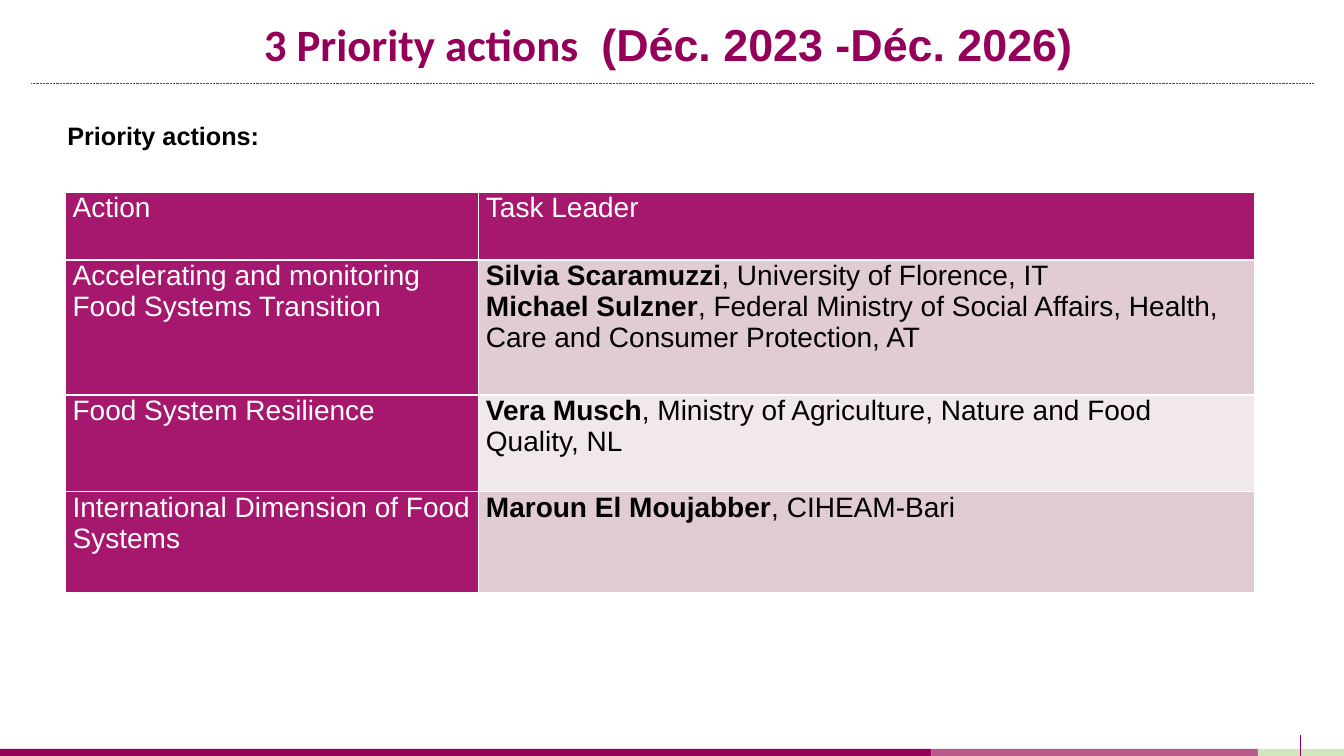
from lxml.etree import SubElement
from pptx import Presentation
from pptx.dml.color import RGBColor
from pptx.enum.dml import MSO_LINE
from pptx.enum.shapes import MSO_CONNECTOR, MSO_SHAPE
from pptx.enum.text import MSO_ANCHOR, MSO_AUTO_SIZE, PP_ALIGN
from pptx.oxml import parse_xml
from pptx.oxml.ns import nsdecls, qn
from pptx.util import Inches, Pt

PLUM = RGBColor(0x94, 0x00, 0x59)
ROSE = RGBColor(0xB8, 0x59, 0x8A)
GREEN = RGBColor(0xD1, 0xE5, 0xBF)
MAGENTA = RGBColor(0xA6, 0x18, 0x6E)
PINK = RGBColor(0xE1, 0xCC, 0xD5)
PALE = RGBColor(0xF1, 0xE8, 0xEB)
WHITE = RGBColor(0xFF, 0xFF, 0xFF)
BLACK = RGBColor(0, 0, 0)

WIDTH, HEIGHT = 13.33, 7.5
FOOTER_HEIGHT = 0.07
FOOTER_SHARES = [(0.693, PLUM), (0.243, ROSE), (0.064, GREEN)]
COLUMN_WIDTHS = [4.1, 7.69]
ROW_HEIGHTS = [0.67, 1.34, 0.96, 1]
ACTIONS = [
    ("Accelerating and monitoring Food Systems Transition", [
        ("Silvia Scaramuzzi", ", University of Florence, IT"),
        ("Michael Sulzner", ", Federal Ministry of Social Affairs, Health, "
                            "Care and Consumer Protection, AT")]),
    ("Food System Resilience", [
        ("Vera Musch", ", Ministry of Agriculture, Nature and Food Quality, NL")]),
    ("International Dimension of Food Systems", [
        ("Maroun El Moujabber", ", CIHEAM-Bari")]),
]


def add_run(p, text, size, color, bold=False, font="Arial"):
    r = p.add_run()
    r.text = text
    r.font.name = font
    r.font.size = Pt(size)
    r.font.bold = bold
    r.font.color.rgb = color


def add_bar(s, left, width, color):
    bar = s.shapes.add_shape(MSO_SHAPE.RECTANGLE, Inches(left), Inches(HEIGHT - FOOTER_HEIGHT),
                             Inches(width), Inches(FOOTER_HEIGHT))
    bar.shadow.inherit = False
    bar.fill.solid()
    bar.fill.fore_color.rgb = color
    bar.line.fill.background()


def add_line(s, start, end, color, dash=None):
    line = s.shapes.add_connector(MSO_CONNECTOR.STRAIGHT, *map(Inches, start + end))
    line.line.color.rgb = color
    line.line.width = Pt(0.5)
    if dash:
        line.line.dash_style = dash
    SubElement(line._element.spPr, qn("a:effectLst"))


def add_footer(s):
    left = 0
    for share, color in FOOTER_SHARES:
        add_bar(s, left, share * WIDTH, color)
        left += share * WIDTH
    add_line(s, (12.9, 7.29), (12.9, HEIGHT), PLUM)


def add_title(s):
    title = s.shapes.title
    title.left, title.top = Inches(0.44), Inches(0.11)
    title.width, title.height = Inches(12.5), Inches(0.65)
    tf = title.text_frame
    tf.auto_size = MSO_AUTO_SIZE.NONE
    tf.vertical_anchor = MSO_ANCHOR.BOTTOM
    p = tf.paragraphs[0]
    p.alignment = PP_ALIGN.CENTER
    p.line_spacing = 0.9
    add_run(p, "3 Priority actions ", 32, PLUM, True, "Calibri")
    add_run(p, " (Déc. 2023 -Déc. 2026) ", 32, PLUM, True)


def add_heading(s, text):
    tf = s.shapes.add_textbox(Inches(0.57), Inches(1.12), Inches(12), Inches(0.44)).text_frame
    tf.word_wrap = True
    tf.vertical_anchor = MSO_ANCHOR.MIDDLE
    add_run(tf.paragraphs[0], text, 18, BLACK, True)


def format_cell(cell, color):
    cell.margin_left = cell.margin_right = Inches(0.07)
    cell.margin_top = cell.margin_bottom = 0
    cell.fill.solid()
    cell.fill.fore_color.rgb = color
    tcPr = cell._tc.get_or_add_tcPr()
    for i, side in enumerate("LRTB"):
        tcPr.insert(i, parse_xml(
            f'<a:ln{side} {nsdecls("a")} w="{Pt(1)}"><a:solidFill>'
            f'<a:srgbClr val="{WHITE}"/></a:solidFill></a:ln{side}>'))


def add_label(cell, text):
    format_cell(cell, MAGENTA)
    add_run(cell.text_frame.paragraphs[0], text, 20, WHITE)


def add_leaders(cell, leaders, color):
    format_cell(cell, color)
    tf = cell.text_frame
    for i, (name, office) in enumerate(leaders):
        p = tf.add_paragraph() if i else tf.paragraphs[0]
        add_run(p, name, 20, BLACK, True)
        add_run(p, office, 20, BLACK)


def add_actions_table(s):
    table = s.shapes.add_table(len(ROW_HEIGHTS), len(COLUMN_WIDTHS), Inches(0.65), Inches(1.91),
                               Inches(sum(COLUMN_WIDTHS)), Inches(sum(ROW_HEIGHTS))).table
    for column, width in zip(table.columns, COLUMN_WIDTHS):
        column.width = Inches(width)
    for row, height in zip(table.rows, ROW_HEIGHTS):
        row.height = Inches(height)
    for i, heading in enumerate(("Action", "Task Leader")):
        add_label(table.cell(0, i), heading)
    for i, (action, leaders) in enumerate(ACTIONS, 1):
        add_label(table.cell(i, 0), action)
        add_leaders(table.cell(i, 1), leaders, PINK if i % 2 else PALE)


def main():
    prs = Presentation()
    prs.slide_width, prs.slide_height = Inches(WIDTH), Inches(HEIGHT)
    s = prs.slides.add_slide(prs.slide_layouts[5])
    add_footer(s)
    add_line(s, (0.31, 0.83), (13.03, 0.83), MAGENTA, MSO_LINE.ROUND_DOT)
    add_title(s)
    add_actions_table(s)
    add_heading(s, "Priority actions:")
    prs.save("out.pptx")


if __name__ == "__main__":
    main()
